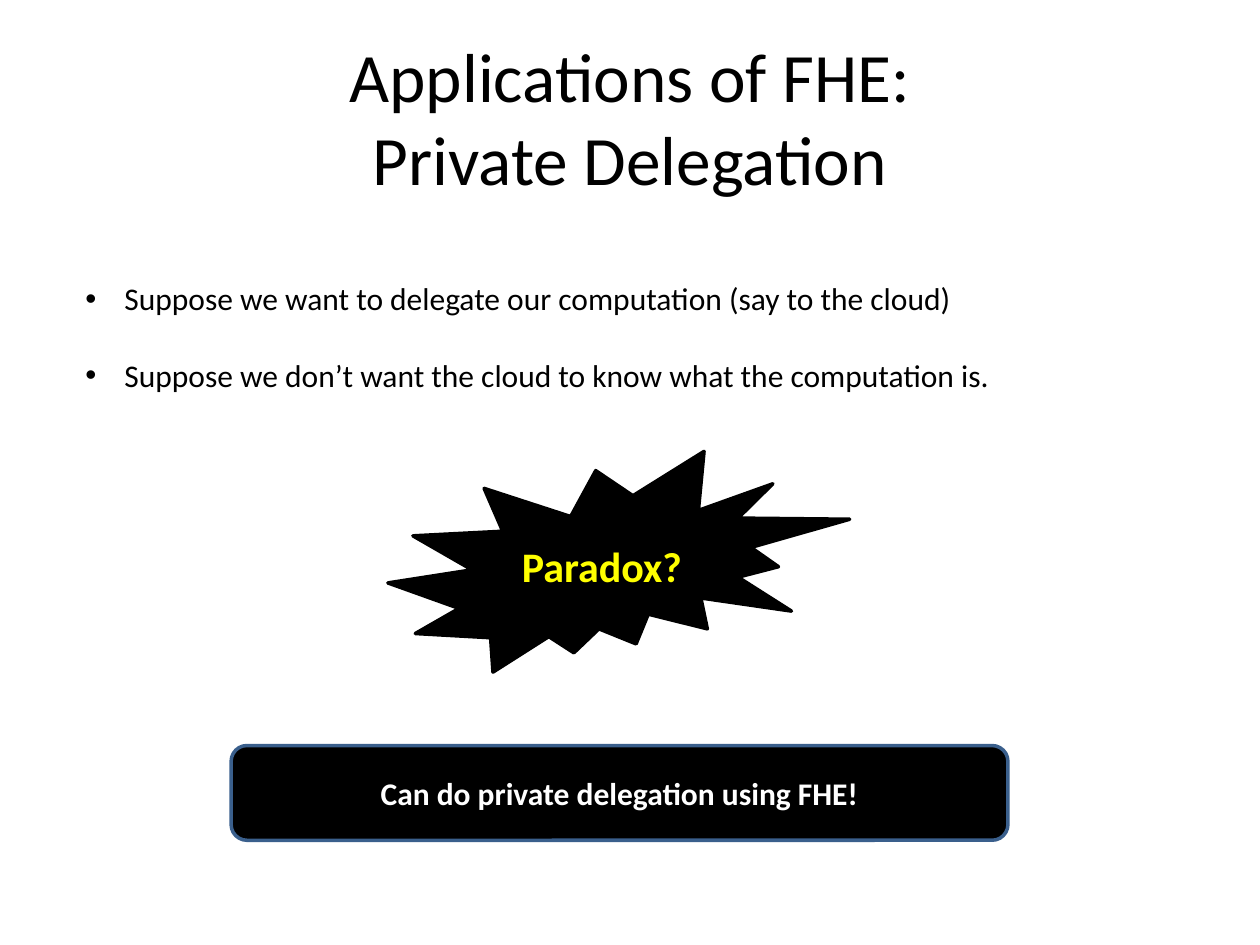
from lxml.etree import SubElement
from pptx import Presentation
from pptx.dml.color import RGBColor
from pptx.enum.shapes import MSO_SHAPE as Preset
from pptx.enum.text import MSO_ANCHOR as Anchor, PP_ALIGN as Align
from pptx.oxml.ns import qn
from pptx.util import Cm, Pt


def colour(value):
    return RGBColor.from_string(value)


class SlideWriter:
    font = "Calibri"
    ink = "000000"

    def __init__(self, page):
        self.page = page

    def add_span(self, para, text, size, shade, bold=False):
        span = para.add_run()
        span.text = text
        span.font.name = self.font
        span.font.size = Pt(size)
        span.font.bold = bold
        span.font.color.rgb = colour(shade)

    def text_box(self, area):
        frame = self.page.shapes.add_textbox(*map(Cm, area)).text_frame
        frame.word_wrap = True
        return frame

    def title(self, lines, area, size):
        frame = self.text_box(area)
        frame.vertical_anchor = Anchor.MIDDLE
        para = frame.paragraphs[0]
        para.alignment = Align.CENTER
        for index, line in enumerate(lines):
            if index:
                para.add_line_break()
            self.add_span(para, line, size, self.ink)

    def bullets(self, items, area, size, gap):
        frame = self.text_box(area)
        indent = Cm(0.79)
        for index, item in enumerate(items):
            para = frame.add_paragraph() if index else frame.paragraphs[0]
            if index:
                para.space_before = Pt(gap)
            props = para._p.get_or_add_pPr()
            props.set("marL", str(indent))
            props.set("indent", str(-indent))
            SubElement(props, qn("a:buFont"), typeface="Arial")
            SubElement(props, qn("a:buChar"), char="•")
            self.add_span(para, item, size, self.ink)

    def callout(self, preset, text, area, size, shade, outline):
        box = self.page.shapes.add_shape(preset, *map(Cm, area))
        box.shadow.inherit = False
        box.fill.solid()
        box.fill.fore_color.rgb = colour(self.ink)
        box.line.color.rgb = colour(outline)
        box.line.width = Pt(2)
        frame = box.text_frame
        frame.word_wrap = True
        frame.vertical_anchor = Anchor.MIDDLE
        para = frame.paragraphs[0]
        para.alignment = Align.CENTER
        self.add_span(para, text, size, shade, bold=True)


def main():
    deck = Presentation()
    deck.slide_width, deck.slide_height = Cm(25.4), Cm(19.05)
    writer = SlideWriter(deck.slides.add_slide(deck.slide_layouts[6]))

    writer.title(["Applications of FHE:", "Private Delegation"],
                 (1.27, 0.76, 22.86, 3.18), 39.6)
    writer.bullets(
        ["Suppose we want to delegate our computation (say to the cloud)",
         "Suppose we don’t want the cloud to know what the computation is."],
        (1.47, 5.51, 20.52, 3.33), 18, 22)
    writer.callout(Preset.EXPLOSION2, "Paradox?",
                   (7.82, 9.1, 9.31, 4.45), 24, "FFFF00", "000000")
    writer.callout(Preset.ROUNDED_RECTANGLE, "Can do private delegation using FHE!",
                   (4.66, 15.03, 15.66, 1.91), 18, "FFFFFF", "3A5F8C")

    deck.save("out.pptx")


if __name__ == "__main__":
    main()
